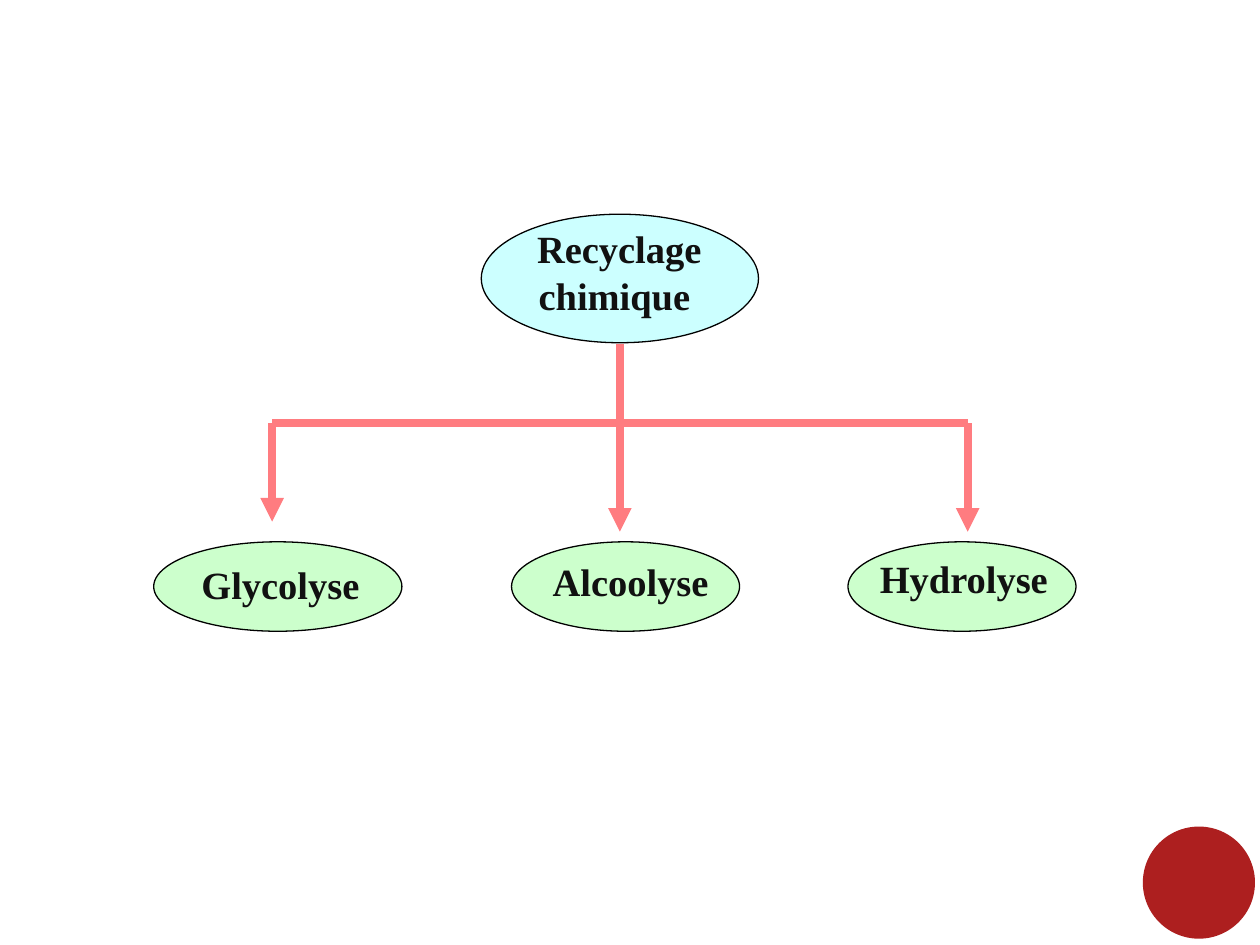
from pptx import Presentation
from pptx import util as u
from pptx.dml.color import RGBColor
from pptx.enum import shapes, text
from pptx.oxml.ns import qn
from lxml import etree

COLORS = {
    "root": "CCFFFF",
    "branch": "CCFFCC",
    "outline": "000000",
    "arrow": "FF7C80",
    "text": "111111",
    "badge": "AD1F1F",
}
TRUNK_X, BAR_Y = 4.92, 3.36
ROOT_BOTTOM = 2.73
BRANCH_TOP, BRANCH_HEIGHT = 4.3, 0.71

# name, ellipse left and width, text box (left, top, width), arrow x and tip y
BRANCHES = [
    ("Hydrolyse", 6.73, 1.81, (6.8, 4.36, 1.7), 7.68, 4.22),
    ("Alcoolyse", 4.06, 1.81, (4.2, 4.38, 1.61), TRUNK_X, 4.22),
    ("Glycolyse", 1.22, 1.97, (1.4, 4.4, 1.65), 2.16, 4.14),
]


def rgb(name):
    return RGBColor.from_string(COLORS[name])


def add_ellipse(slide, left, top, width, height, fill, outline=None):
    sp = slide.shapes.add_shape(
        shapes.MSO_SHAPE.OVAL,
        u.Inches(left), u.Inches(top), u.Inches(width), u.Inches(height))
    sp.shadow.inherit = False
    sp.fill.solid()
    sp.fill.fore_color.rgb = rgb(fill)
    if outline:
        sp.line.color.rgb = rgb(outline)
        sp.line.width = u.Pt(0.75)
    else:
        sp.line.fill.background()
    return sp


def add_text(slide, content, left, top, width, height=0.47, *, size=22,
             font="Times New Roman", color="text", bold=True):
    box = slide.shapes.add_textbox(
        u.Inches(left), u.Inches(top), u.Inches(width), u.Inches(height))
    tf = box.text_frame
    tf.word_wrap = True
    tf.auto_size = text.MSO_AUTO_SIZE.SHAPE_TO_FIT_TEXT
    p = tf.paragraphs[0]
    p.alignment = text.PP_ALIGN.CENTER
    r = p.add_run()
    r.text = content
    r.font.size = u.Pt(size)
    r.font.name = font
    r.font.bold = bold
    r.font.color.rgb = rgb(color)
    return box


def add_line(slide, x1, y1, x2, y2, arrow=False):
    line = slide.shapes.add_connector(
        shapes.MSO_CONNECTOR.STRAIGHT,
        u.Inches(x1), u.Inches(y1), u.Inches(x2), u.Inches(y2))
    line.line.color.rgb = rgb("arrow")
    line.line.width = u.Pt(4.5)
    if arrow:
        etree.SubElement(line.line._get_or_add_ln(), qn("a:tailEnd"), type="triangle")
    etree.SubElement(line._element.spPr, qn("a:effectLst"))
    return line


def add_root(slide):
    add_ellipse(slide, 3.82, 1.7, 2.2, 1.02, "root", "outline")
    add_text(slide, "Recyclage chimique ", 3.85, 1.74, 2.13, 0.83)


def add_arrows(slide):
    xs = [branch[4] for branch in BRANCHES]
    add_line(slide, min(xs), BAR_Y, max(xs), BAR_Y)
    add_line(slide, TRUNK_X, ROOT_BOTTOM, TRUNK_X, BAR_Y)
    for *_, x, tip in BRANCHES:
        add_line(slide, x, BAR_Y, x, tip, arrow=True)


def add_branches(slide):
    for name, left, width, label_box, *_ in BRANCHES:
        add_ellipse(slide, left, BRANCH_TOP, width, BRANCH_HEIGHT, "branch", "outline")
        add_text(slide, name, *label_box)


def main():
    prs = Presentation()
    prs.slide_width, prs.slide_height = u.Inches(10), u.Inches(7.5)
    slide = prs.slides.add_slide(prs.slide_layouts[6])
    add_root(slide)
    add_arrows(slide)
    add_branches(slide)
    add_ellipse(slide, 9.07, 6.56, 0.89, 0.89, "badge")
    prs.save("out.pptx")


if __name__ == "__main__":
    main()
